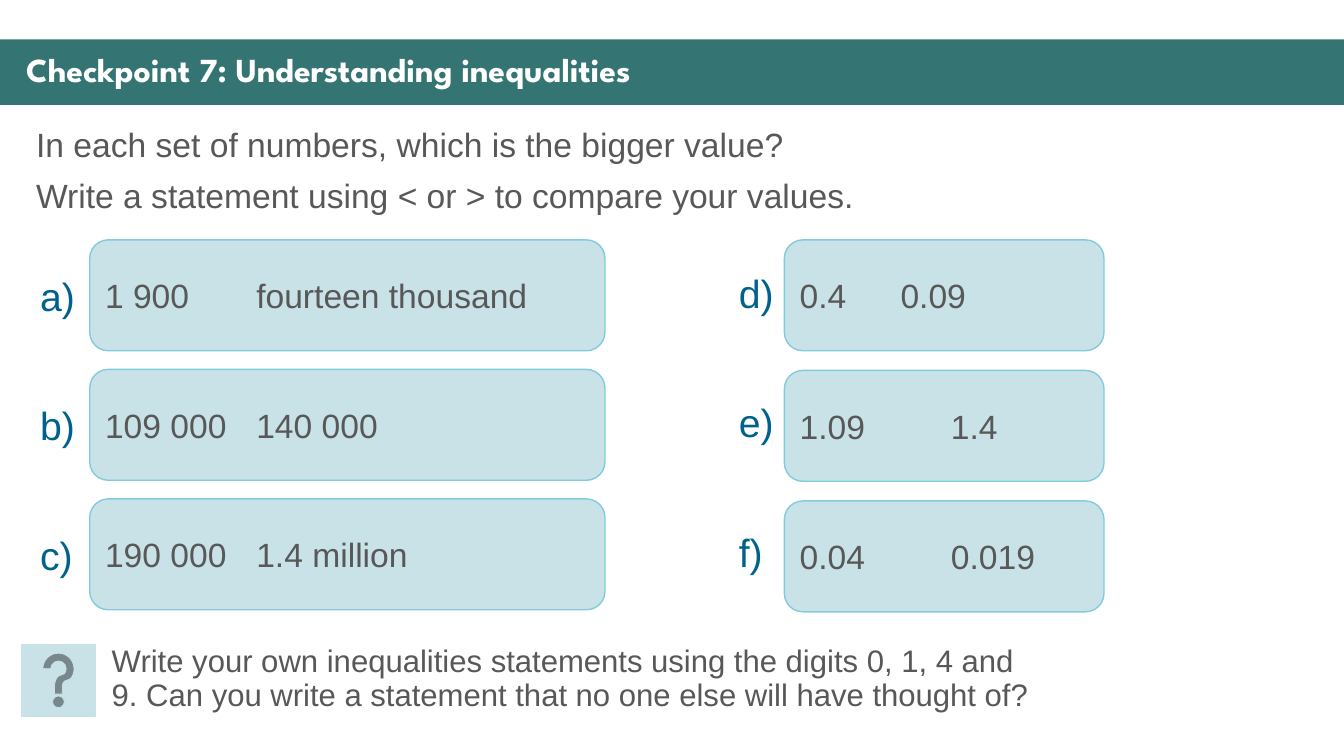
from pptx import Presentation
from pptx import util as u
from pptx.dml.color import RGBColor
from pptx.enum import shapes, text

COLOURS = {
    "banner": "347574",
    "title": "FFFFFF",
    "body": "585858",
    "label": "00628C",
    "card": "C8E2E8",
    "outline": "82CBDD",
}


def style_shape(shape, fill, line, width):
    shape.shadow.inherit = False
    shape.fill.solid()
    shape.fill.fore_color.rgb = RGBColor.from_string(COLOURS[fill])
    shape.line.color.rgb = RGBColor.from_string(COLOURS[line])
    shape.line.width = u.Pt(width)


def write(para, words, size, colour, before=0, spacing=1.0, font="Arial", bold=False):
    para.alignment = text.PP_ALIGN.LEFT
    para.space_before = u.Pt(before)
    para.line_spacing = spacing
    span = para.add_run()
    span.text = words
    span.font.name = font
    span.font.size = u.Pt(size)
    span.font.bold = bold
    span.font.color.rgb = RGBColor.from_string(COLOURS[colour])


deck = Presentation()
deck.slide_width, deck.slide_height = u.Inches(13.33), u.Inches(7.5)
page = deck.slides.add_slide(deck.slide_layouts[5])

# Banner, placed behind the title
banner = page.shapes.add_shape(
    shapes.MSO_SHAPE.RECTANGLE, 0, u.Inches(0.39), deck.slide_width, u.Inches(0.65))
style_shape(banner, "banner", "banner", 0)
banner.line.fill.background()
title = page.shapes.title
title._element.addprevious(banner._element)

# Title
title.left, title.top = u.Inches(0.16), u.Inches(0.48)
title.width, title.height = u.Inches(13.04), u.Inches(0.47)
title.text_frame.auto_size = text.MSO_AUTO_SIZE.NONE
title.text_frame.vertical_anchor = text.MSO_ANCHOR.MIDDLE
write(title.text_frame.paragraphs[0], "Checkpoint 7: Understanding inequalities",
      24, "title", spacing=0.9, font="League Spartan", bold=True)

# Instructions
intro = page.shapes.add_textbox(
    u.Inches(0.26), u.Inches(1.23), u.Inches(12.81), u.Inches(0.97)).text_frame
intro.word_wrap = True
write(intro.paragraphs[0], "In each set of numbers, which is the bigger value?",
      24, "body", 10, 0.9)
write(intro.add_paragraph(), "Write a statement using < or > to compare your values.",
      24, "body", 10, 0.9)

# Two columns of number pairs: card left, width, row step, label left, label top, rows
columns = [
    (0.89, 5.11, 1.285, 0.3, 2.65, [
        ("a)", "1 900\t\tfourteen thousand"),
        ("b)", "109 000\t140 000"),
        ("c)", "190 000\t1.4 million")]),
    (7.78, 3.17, 1.295, 7.23, 2.62, [
        ("d)", "0.4\t\t0.09"),
        ("e)", "1.09\t\t1.4"),
        ("f)", "0.04\t\t0.019")]),
]
for card_left, card_width, step, label_left, label_top, rows in columns:
    for row, (letter, numbers) in enumerate(rows):
        card = page.shapes.add_shape(
            shapes.MSO_SHAPE.ROUNDED_RECTANGLE, u.Inches(card_left),
            u.Inches(2.38 + row * step), u.Inches(card_width), u.Inches(1.1))
        style_shape(card, "card", "outline", 1)
        card.text_frame.vertical_anchor = text.MSO_ANCHOR.MIDDLE
        write(card.text_frame.paragraphs[0], numbers, 24, "body", 4.8)

        label = page.shapes.add_textbox(
            u.Inches(label_left), u.Inches(label_top + row * 1.285),
            u.Inches(0.55), u.Inches(0.57)).text_frame
        label.word_wrap = False
        write(label.paragraphs[0], letter, 28, "label", 5.6)

# Extension question
help_icon = page.shapes.add_shape(
    shapes.MSO_SHAPE.ACTION_BUTTON_HELP,
    u.Inches(0.21), u.Inches(6.39), u.Inches(0.74), u.Inches(0.72))
style_shape(help_icon, "card", "card", 0.5)
question = page.shapes.add_textbox(
    u.Inches(1.01), u.Inches(6.36), u.Inches(9.32), u.Inches(1.04)).text_frame
question.word_wrap = True
write(question.paragraphs[0],
      "Write your own inequalities statements using the digits 0, 1, 4 and 9. "
      "Can you write a statement that no one else will have thought of?",
      22.2, "body", 10, 0.9)

deck.save("out.pptx")
